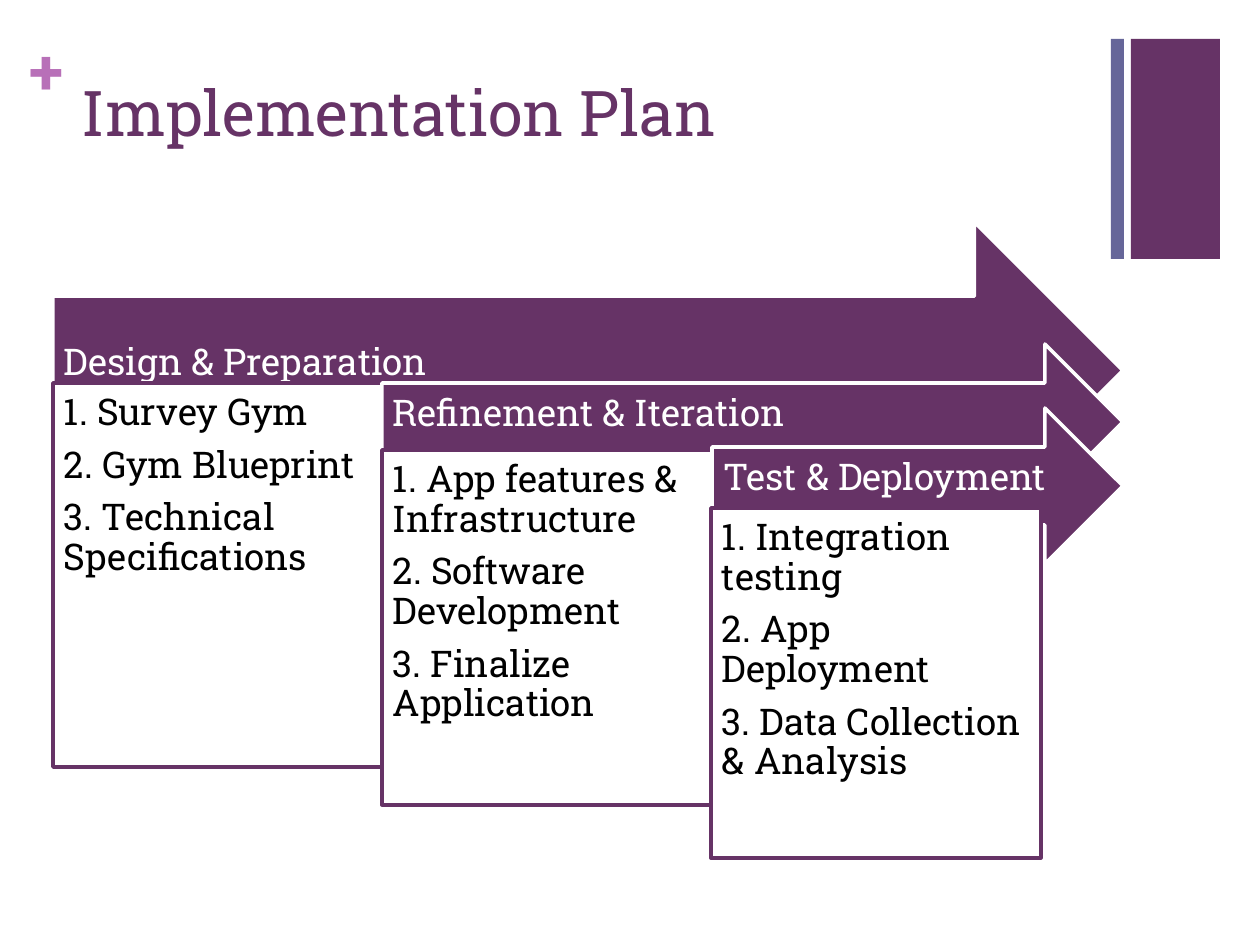
from dataclasses import dataclass

import pptx
import pptx.dml.color
import pptx.enum.shapes
import pptx.enum.text
import pptx.util

PX_PER_INCH = 126
PLUM = pptx.dml.color.RGBColor(0x66, 0x33, 0x66)
ORCHID = pptx.dml.color.RGBColor(0xB8, 0x70, 0xB8)
SLATE = pptx.dml.color.RGBColor(0x66, 0x66, 0x99)
WHITE = pptx.dml.color.RGBColor(0xFF, 0xFF, 0xFF)
BLACK = pptx.dml.color.RGBColor(0x00, 0x00, 0x00)
FONT = "Roboto Slab"
PHASE_SIZE = 21
ARROW_TIP = 1123
TASKS_WIDTH = 330
PAD = 11

SHAPES = pptx.enum.shapes.MSO_SHAPE
ANCHORS = pptx.enum.text.MSO_ANCHOR


@dataclass(frozen=True)
class Box:
    left: int
    top: int
    width: int
    height: int

    def emu(self) -> list[pptx.util.Emu]:
        lengths = (self.left, self.top, self.width, self.height)
        return [px(length) for length in lengths]


@dataclass(frozen=True)
class Phase:
    name: str
    arrow_left: int
    arrow_top: int
    arrow_height: int
    tasks_left: int
    tasks_top: int
    tasks_height: int
    tasks: tuple[str, ...]


PHASES = (
    Phase("Design & Preparation", 53, 222, 297, 53, 383, 384,
          ("Survey Gym", "Gym Blueprint", "Technical Specifications")),
    Phase("Refinement & Iteration", 382, 344, 156, 382, 450, 355,
          ("App features & Infrastructure", "Software Development",
           "Finalize Application")),
    Phase("Test & Deployment", 712, 408, 156, 711, 508, 350,
          ("Integration testing", "App Deployment",
           "Data Collection & Analysis")),
)


def px(length: int) -> pptx.util.Emu:
    return pptx.util.Emu(round(length * 914400 / PX_PER_INCH))


def write(shape, *lines: str, size: int, color, bold: bool = False,
          anchor=ANCHORS.TOP, margins=(PAD, PAD, PAD, PAD),
          line_spacing: float = 1.0, space_after: float = 0) -> None:
    """Fill a shape with one paragraph per line; margins run left, top, right, bottom."""
    frame = shape.text_frame
    frame.word_wrap = True
    frame.auto_size = pptx.enum.text.MSO_AUTO_SIZE.NONE
    frame.vertical_anchor = anchor
    (frame.margin_left, frame.margin_top,
     frame.margin_right, frame.margin_bottom) = map(px, margins)
    frame.text = "\n".join(lines)
    for paragraph in frame.paragraphs:
        paragraph.alignment = pptx.enum.text.PP_ALIGN.LEFT
        paragraph.line_spacing = line_spacing
        paragraph.space_before = pptx.util.Pt(0)
        paragraph.space_after = pptx.util.Pt(space_after)
        font = paragraph.runs[0].font
        font.name = FONT
        font.size = pptx.util.Pt(size)
        font.bold = bold
        font.color.rgb = color


def add_block(slide, preset, box: Box, fill, line=None):
    block = slide.shapes.add_shape(preset, *box.emu())
    block.shadow.inherit = False
    block.fill.solid()
    block.fill.fore_color.rgb = fill
    if line is None:
        block.line.fill.background()
    else:
        block.line.color.rgb = line
        block.line.width = pptx.util.Pt(2)
    return block


def add_phase(slide, phase: Phase) -> None:
    spacing = {"line_spacing": 0.9, "space_after": 0.35 * PHASE_SIZE}
    arrow_box = Box(phase.arrow_left, phase.arrow_top,
                    ARROW_TIP - phase.arrow_left, phase.arrow_height)
    arrow = add_block(slide, SHAPES.RIGHT_ARROW, arrow_box, PLUM, WHITE)
    write(arrow, phase.name, size=PHASE_SIZE, color=WHITE,
          anchor=ANCHORS.MIDDLE, margins=(PAD, PAD, 35, 25), **spacing)

    tasks_box = Box(phase.tasks_left, phase.tasks_top,
                    TASKS_WIDTH, phase.tasks_height)
    tasks = add_block(slide, SHAPES.RECTANGLE, tasks_box, WHITE, PLUM)
    numbered = [f"{number}. {task}"
                for number, task in enumerate(phase.tasks, start=1)]
    write(tasks, *numbered, size=PHASE_SIZE, color=BLACK, **spacing)


def add_decoration(slide) -> None:
    add_block(slide, SHAPES.RECTANGLE, Box(1131, 39, 89, 220), PLUM)
    add_block(slide, SHAPES.RECTANGLE, Box(1111, 39, 13, 220), SLATE)
    plus = slide.shapes.add_textbox(*Box(30, 32, 37, 77).emu())
    write(plus, "+", size=36, color=ORCHID, bold=True, margins=(0, 0, 0, 0))


def add_title(slide, text: str) -> None:
    title = slide.shapes.title
    title.left, title.top, title.width, title.height = Box(69, 67, 1041, 154).emu()
    write(title, text, size=36, color=PLUM, margins=(13, 6, 13, 6))


def main() -> None:
    deck = pptx.Presentation()
    deck.slide_width = px(1260)
    deck.slide_height = px(945)
    slide = deck.slides.add_slide(deck.slide_layouts.get_by_name("Title Only"))
    add_decoration(slide)
    add_title(slide, "Implementation Plan")
    for phase in PHASES:
        add_phase(slide, phase)
    deck.save("out.pptx")


if __name__ == "__main__":
    main()
